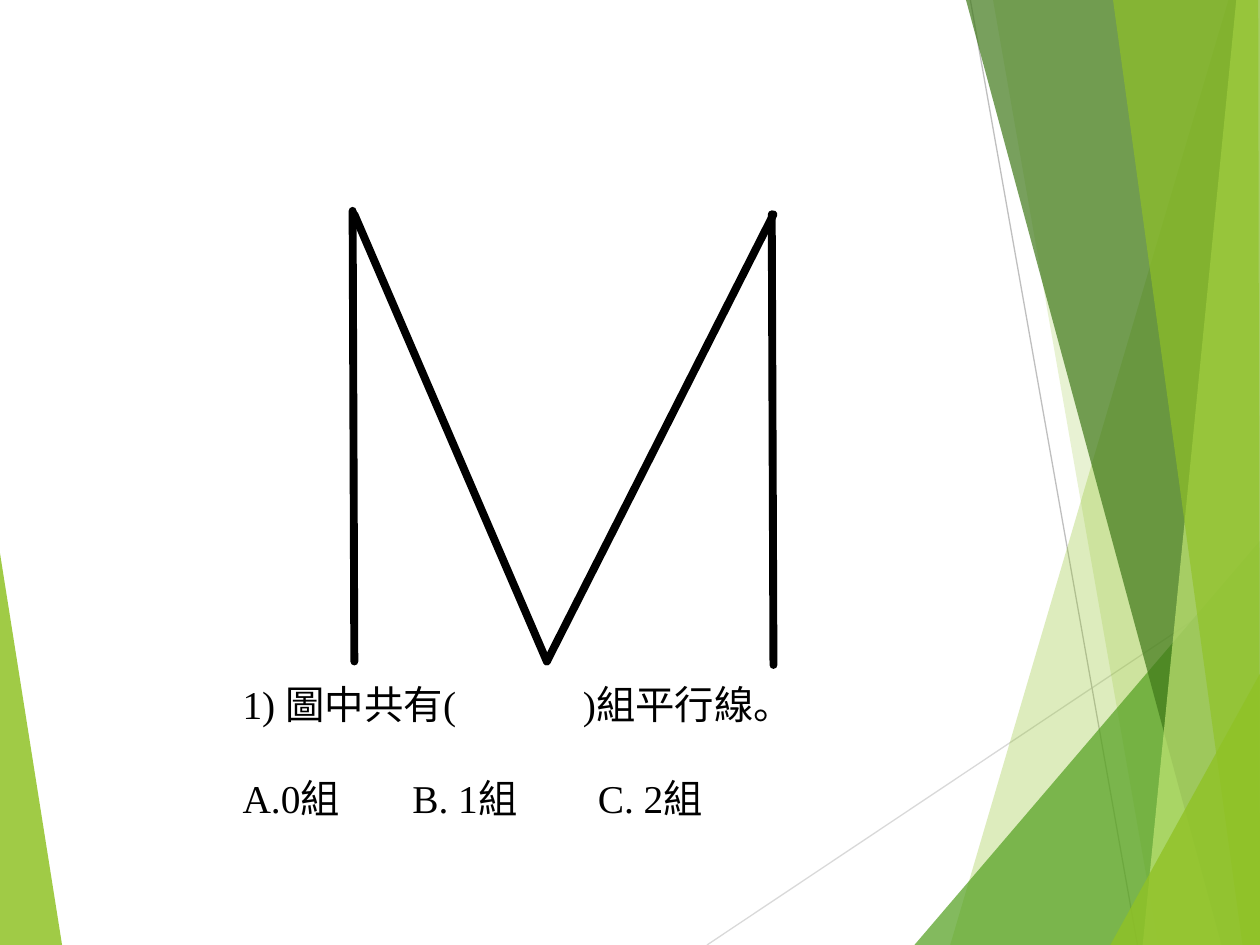
from lxml import etree
from pptx import Presentation
from pptx.dml.color import RGBColor
from pptx.enum import shapes, text
from pptx.oxml import ns
from pptx.util import Pt

WIDE, HIGH = 720, 540
BLACK = RGBColor(0, 0, 0)
LIGHT = RGBColor(0xD9, 0xD9, 0xD9)
GREY = RGBColor(0xBF, 0xBF, 0xBF)
LIME = RGBColor(0x90, 0xC2, 0x26)
GREEN = RGBColor(0x54, 0xA0, 0x21)
DARK = RGBColor(0x3F, 0x78, 0x19)
PALE = RGBColor(0xC0, 0xE4, 0x74)

# colour, opacity in percent, corners
LEFT = (LIME, 85, [(0, 316), (35.5, HIGH), (0, HIGH)])
RAYS = [
    (LIGHT, (404, HIGH), (WIDE, 329)),
    (GREY, (554.5, 0), (650, HIGH)),
]
BANDS = [
    (LIME, 30, [(702, 0), (543, HIGH), (WIDE, HIGH), (WIDE, 0)]),
    (LIME, 20, [(567.5, 0), (662, HIGH), (WIDE, HIGH), (WIDE, 0)]),
    (GREEN, 72, [(522.5, HIGH), (WIDE, 309), (WIDE, HIGH)]),
    (DARK, 70, [(552, 0), (698, HIGH), (WIDE, HIGH), (WIDE, 0)]),
    (PALE, 70, [(706.5, 0), (653, HIGH), (WIDE, HIGH), (WIDE, 0)]),
    (LIME, 65, [(636, 0), (710, HIGH), (WIDE, HIGH), (719, 0)]),
    (LIME, 80, [(634.5, HIGH), (WIDE, 385), (WIDE, HIGH)]),
]
STROKES = [
    ((201.5, 120.5), (202.5, 378)),
    ((441, 122.5), (442, 380)),
    ((202.5, 122.5), (312.5, 378)),
    ((442, 122.5), (312.5, 378)),
]
# wording, tab stops, space before
LINES = [
    ("1) 圖中共有(\t)組平行線。", [194.5], 0),
    ("A.0組\tB. 1組\tC. 2組", [97, 203], 27),
]


def add(parent, tag, **attrs):
    node = etree.SubElement(parent, ns.qn(tag))
    for key, val in attrs.items():
        node.set(key, str(val))
    return node


def band(slide, color, alpha, spots):
    pts = [(Pt(x), Pt(y)) for x, y in spots]
    pen = slide.shapes.build_freeform(*pts[0], scale=1.0)
    pen.add_line_segments(pts[1:], close=True)
    shape = pen.convert_to_shape()
    shape.shadow.inherit = False
    shape.line.fill.background()
    shape.fill.solid()
    shape.fill.fore_color.rgb = color
    tint = shape.fill._xPr.find(".//" + ns.qn("a:srgbClr"))
    add(tint, "a:alpha", val=alpha * 1000)


def stroke(slide, start, end, color, width, cap="flat"):
    ends = [Pt(v) for v in (*start, *end)]
    line = slide.shapes.add_connector(shapes.MSO_CONNECTOR.STRAIGHT, *ends)
    line.line.color.rgb = color
    line.line.width = Pt(width)
    line.line._get_or_add_ln().set("cap", cap)
    add(line._element.spPr, "a:effectLst")


def write(slide, lines, box, size, font, color):
    frame = slide.shapes.add_textbox(*[Pt(v) for v in box]).text_frame
    frame.word_wrap = True
    frame.auto_size = text.MSO_AUTO_SIZE.SHAPE_TO_FIT_TEXT
    for i, (words, stops, gap) in enumerate(lines):
        para = frame.add_paragraph() if i else frame.paragraphs[0]
        para.space_before = Pt(gap)
        tabs = add(para._p.get_or_add_pPr(), "a:tabLst")
        for stop in stops:
            add(tabs, "a:tab", pos=int(Pt(stop)), algn="l")
        run = para.add_run()
        run.text = words
        run.font.size = Pt(size)
        run.font.name = font
        run.font.color.rgb = color


def main():
    deck = Presentation()
    deck.slide_width, deck.slide_height = Pt(WIDE), Pt(HIGH)
    slide = deck.slides.add_slide(deck.slide_layouts[6])
    band(slide, *LEFT)
    for color, start, end in RAYS:
        stroke(slide, start, end, color, 0.75)
    for item in BANDS:
        band(slide, *item)
    for start, end in STROKES:
        stroke(slide, start, end, BLACK, 4.5, cap="rnd")
    write(slide, LINES, box=(131.5, 385, 398, 89), size=22.5,
          font="Times New Roman", color=BLACK)
    deck.save("out.pptx")


if __name__ == "__main__":
    main()
